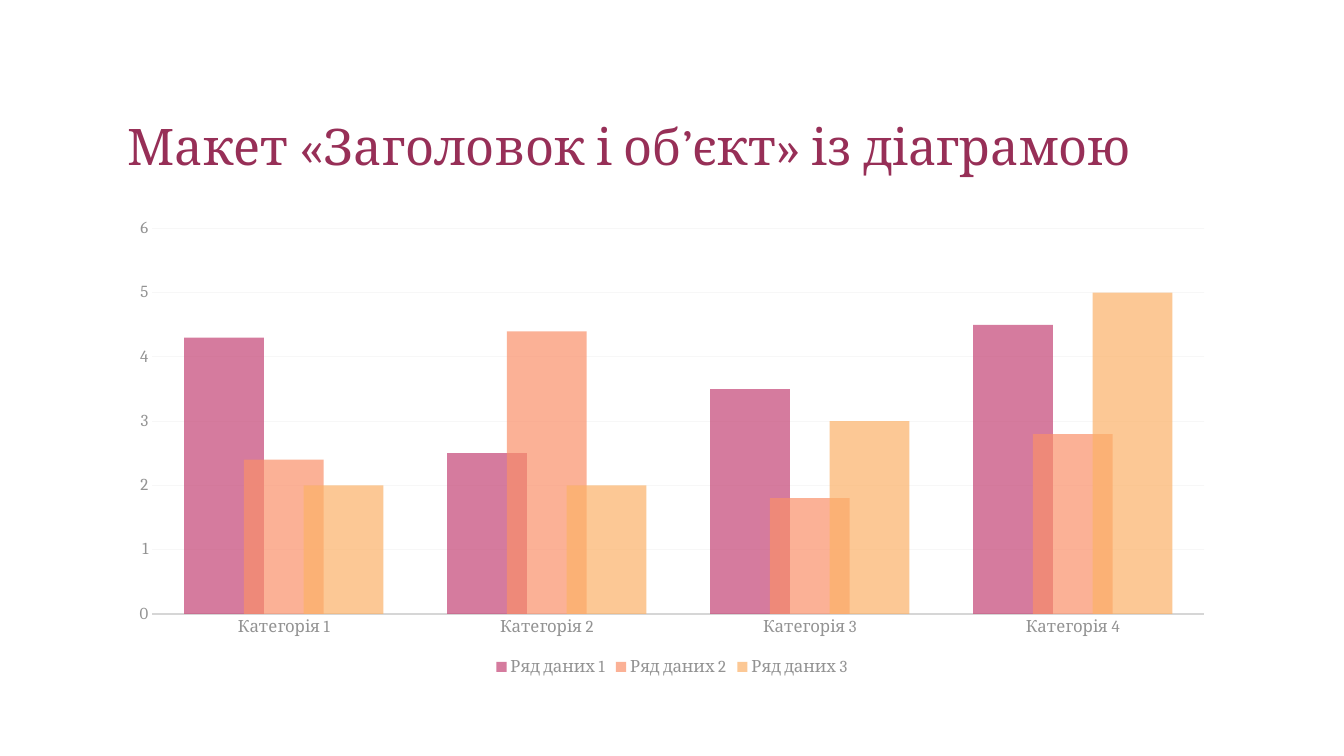
import pptx
import pptx.util
import pptx.chart.data
import pptx.dml.color
import pptx.enum.chart
import pptx.enum.text
from lxml import etree

TITLE = "Макет «Заголовок і об’єкт» із діаграмою"
CATEGORIES = ["Категорія 1", "Категорія 2", "Категорія 3", "Категорія 4"]
SERIES = [
    ("Ряд даних 1", (4.3, 2.5, 3.5, 4.5), "rose"),
    ("Ряд даних 2", (2.4, 4.4, 1.8, 2.8), "coral"),
    ("Ряд даних 3", (2, 2, 3, 5), "apricot"),
]
COLORS = {
    "title": "972F57", "rose": "C44475", "coral": "FA906A", "apricot": "FCB268",
    "label": "939393", "text": "595959", "axis": "D6D6D6", "grid": "F7F7F7",
}
FONT = "Cambria"
BAR_OPACITY = 70
WIDTH, HEIGHT = 13.33, 7.5
CONTENT_WIDTH = 11
LEFT = (WIDTH - CONTENT_WIDTH) / 2
TITLE_TOP, TITLE_HEIGHT = 0.5, 1.3
CHART_TOP, CHART_HEIGHT = 2.08, 4.67


def color(name):
    return pptx.dml.color.RGBColor.from_string(COLORS[name])


def style_font(font, size, color_name):
    font.name = FONT
    font.size = pptx.util.Pt(size)
    font.bold = False
    font.color.rgb = color(color_name)


def style_line(line, color_name, width):
    line.color.rgb = color(color_name)
    line.width = pptx.util.Pt(width)


def set_opacity(fill, percent):
    """Make a solid RGB fill partly transparent."""
    tag = pptx.oxml.ns.qn
    rgb = fill._xPr.find(tag("a:solidFill")).find(tag("a:srgbClr"))
    etree.SubElement(rgb, tag("a:alpha")).set("val", str(percent * 1000))


def add_title(page):
    title = page.shapes.title
    title.left, title.top, title.width, title.height = map(
        pptx.util.Inches, (LEFT, TITLE_TOP, CONTENT_WIDTH, TITLE_HEIGHT))
    frame = title.text_frame
    frame.word_wrap = True
    frame.auto_size = pptx.enum.text.MSO_AUTO_SIZE.NONE
    frame.vertical_anchor = pptx.enum.text.MSO_ANCHOR.BOTTOM
    para = frame.paragraphs[0]
    para.alignment = pptx.enum.text.PP_ALIGN.LEFT
    para.line_spacing = 0.9
    span = para.add_run()
    span.text = TITLE
    style_font(span.font, 36, "title")


def add_column_chart(page):
    data = pptx.chart.data.CategoryChartData()
    data.categories = CATEGORIES
    for name, values, _ in SERIES:
        data.add_series(name, values)
    chart = page.shapes.add_chart(
        pptx.enum.chart.XL_CHART_TYPE.COLUMN_CLUSTERED,
        *map(pptx.util.Inches, (LEFT, CHART_TOP, CONTENT_WIDTH, CHART_HEIGHT)),
        data).chart
    chart.has_title = False
    style_font(chart.font, 10, "text")

    plot = chart.plots[0]
    plot.vary_by_categories = False
    plot.gap_width = 80
    plot.overlap = 25
    for series, (_, _, color_name) in zip(plot.series, SERIES):
        series.invert_if_negative = False
        fill = series.format.fill
        fill.solid()
        fill.fore_color.rgb = color(color_name)
        set_opacity(fill, BAR_OPACITY)

    for axis in (chart.category_axis, chart.value_axis):
        axis.major_tick_mark = pptx.enum.chart.XL_TICK_MARK.NONE
        axis.minor_tick_mark = pptx.enum.chart.XL_TICK_MARK.NONE
        style_font(axis.tick_labels.font, 12, "label")
    style_line(chart.category_axis.format.line, "axis", 1.25)
    chart.value_axis.format.line.fill.background()
    chart.value_axis.has_major_gridlines = True
    style_line(chart.value_axis.major_gridlines.format.line, "grid", 0.75)

    chart.has_legend = True
    chart.legend.position = pptx.enum.chart.XL_LEGEND_POSITION.BOTTOM
    chart.legend.include_in_layout = False
    style_font(chart.legend.font, 12, "label")


def main():
    deck = pptx.Presentation()
    deck.slide_width = pptx.util.Inches(WIDTH)
    deck.slide_height = pptx.util.Inches(HEIGHT)
    page = deck.slides.add_slide(deck.slide_layouts.get_by_name("Title Only"))
    add_title(page)
    add_column_chart(page)
    deck.save("out.pptx")


if __name__ == "__main__":
    main()
